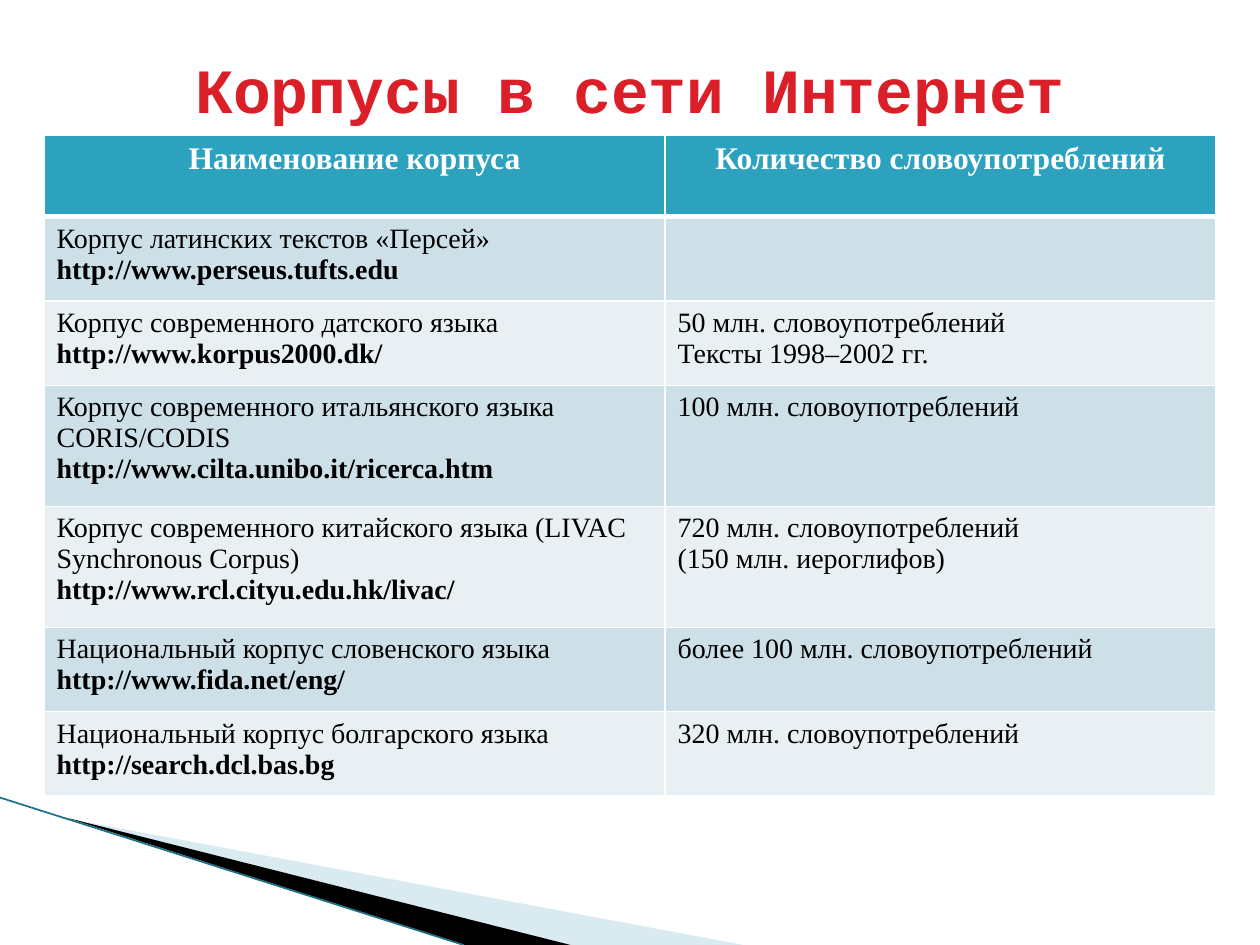
from dataclasses import dataclass

from lxml import etree
from pptx import Presentation
from pptx.dml.color import RGBColor
from pptx.enum.shapes import MSO_CONNECTOR
from pptx.enum.text import MSO_ANCHOR, PP_ALIGN
from pptx.oxml import parse_xml
from pptx.oxml.ns import nsdecls, qn
from pptx.util import Inches, Pt

CENTER, LEFT = PP_ALIGN.CENTER, PP_ALIGN.LEFT
MIDDLE = MSO_ANCHOR.MIDDLE
STRAIGHT = MSO_CONNECTOR.STRAIGHT

TITLE = "Корпусы в сети Интернет"
HEADER = ["Наименование корпуса", "Количество словоупотреблений"]
# Name of the corpus, its address, lines about its size
CORPORA = [
    ("Корпус латинских текстов «Персей»", "http://www.perseus.tufts.edu", []),
    ("Корпус современного датского языка", "http://www.korpus2000.dk/",
     ["50 млн. словоупотреблений", "Тексты 1998–2002 гг."]),
    ("Корпус современного итальянского языка CORIS/CODIS",
     "http://www.cilta.unibo.it/ricerca.htm", ["100 млн. словоупотреблений"]),
    ("Корпус современного китайского языка (LIVAC Synchronous Corpus)",
     "http://www.rcl.cityu.edu.hk/livac/",
     ["720 млн. словоупотреблений", "(150 млн. иероглифов)"]),
    ("Национальный корпус словенского языка", "http://www.fida.net/eng/",
     ["более 100 млн. словоупотреблений"]),
    ("Национальный корпус болгарского языка", "http://search.dcl.bas.bg",
     ["320 млн. словоупотреблений"]),
]


@dataclass(frozen=True)
class Theme:
    title_font: str = "Courier New"
    body_font: str = "Times New Roman"
    title_size: int = 36
    header_size: int = 18
    body_size: int = 16
    title: str = "DA1F28"
    header: str = "2DA2BF"
    bands: tuple = ("CDE0E8", "E8F0F4")
    white: str = "FFFFFF"
    black: str = "000000"
    pale_wedge: str = "A0CBDC"
    pale_opacity: int = 40
    edge: str = "1F7389"


THEME = Theme()
SLIDE_WIDTH, SLIDE_HEIGHT = 10, 7.5
MARGIN = 0.35
CONTENT_WIDTH = SLIDE_WIDTH - 2 * MARGIN
TABLE_TOP = 1.07
COLUMN_SHARES = [0.53, 0.47]
HEADER_HEIGHT, SHORT_ROW, TALL_ROW = 0.65, 0.67, 0.96
LONG_NAME = 45  # longer names wrap to a second line

WEDGES = [
    ([(0.55, 6.5), (5.9, SLIDE_HEIGHT), (4.53, SLIDE_HEIGHT)],
     THEME.pale_wedge, THEME.pale_opacity),
    ([(0.53, 6.49), (4.53, SLIDE_HEIGHT), (3.69, SLIDE_HEIGHT)],
     THEME.black, 100),
]
EDGE = [(0, 6.33), (3.68, SLIDE_HEIGHT)]


def rgb(color):
    return RGBColor.from_string(color)


def write(frame, lines, *, font=THEME.body_font, size=THEME.body_size,
          color=THEME.black, align=LEFT):
    """Fill one paragraph with (text, bold) lines parted by line breaks."""
    frame.word_wrap = True
    para = frame.paragraphs[0]
    para.alignment = align
    para.font.size = Pt(size)
    for index, (text, bold) in enumerate(lines):
        if index:
            para.add_line_break()
        span = para.add_run()
        span.text = text
        span.font.name = font
        span.font.size = Pt(size)
        span.font.bold = bold
        span.font.color.rgb = rgb(color)


def set_borders(cell, bottom=1):
    properties = cell._tc.get_or_add_tcPr()
    widths = {"lnL": 1, "lnR": 1, "lnT": 1, "lnB": bottom}
    for index, (tag, width) in enumerate(widths.items()):
        properties.insert(index, parse_xml(
            f'<a:{tag} {nsdecls("a")} w="{Pt(width)}"><a:solidFill>'
            f'<a:srgbClr val="{THEME.white}"/></a:solidFill></a:{tag}>'))


def fill_cell(cell, lines, fill, bottom=1, **text_format):
    cell.fill.solid()
    cell.fill.fore_color.rgb = rgb(fill)
    set_borders(cell, bottom)
    write(cell.text_frame, lines, **text_format)


def add_wedge(page, points, color, opacity):
    builder = page.shapes.build_freeform(
        *(Inches(value) for value in points[0]), scale=1)
    builder.add_line_segments(
        [(Inches(x), Inches(y)) for x, y in points[1:]], close=True)
    wedge = builder.convert_to_shape()
    wedge.shadow.inherit = False
    wedge.fill.solid()
    wedge.fill.fore_color.rgb = rgb(color)
    wedge.line.fill.background()
    if opacity < 100:
        tint = wedge.fill._xPr.find(".//" + qn("a:srgbClr"))
        etree.SubElement(tint, qn("a:alpha"), val=str(opacity * 1000))


def add_edge(page):
    start, end = EDGE
    edge = page.shapes.add_connector(
        STRAIGHT, *(Inches(value) for value in start + end))
    edge.line.color.rgb = rgb(THEME.edge)
    edge.line.width = Pt(1)
    etree.SubElement(edge._element.spPr, qn("a:effectLst"))


def add_corpus_table(page):
    heights = [HEADER_HEIGHT] + [
        TALL_ROW if len(name) > LONG_NAME else SHORT_ROW
        for name, _, _ in CORPORA]
    table = page.shapes.add_table(
        len(heights), len(HEADER), Inches(MARGIN), Inches(TABLE_TOP),
        Inches(CONTENT_WIDTH), Inches(sum(heights))).table
    for column, share in zip(table.columns, COLUMN_SHARES):
        column.width = Inches(CONTENT_WIDTH * share)
    for row, height in zip(table.rows, heights):
        row.height = Inches(height)

    for column, text in enumerate(HEADER):
        fill_cell(table.cell(0, column), [(text, True)], THEME.header, bottom=3,
                  size=THEME.header_size, color=THEME.white, align=CENTER)
    for index, (name, address, amounts) in enumerate(CORPORA):
        band = THEME.bands[index % 2]
        fill_cell(table.cell(index + 1, 0),
                  [(name, False), (address, True)], band)
        fill_cell(table.cell(index + 1, 1),
                  [(line, False) for line in amounts], band)


def add_title(page):
    box = page.shapes.add_textbox(
        Inches(MARGIN), Inches(0.21), Inches(CONTENT_WIDTH), Inches(0.98))
    box.text_frame.vertical_anchor = MIDDLE
    write(box.text_frame, [(TITLE, True)], font=THEME.title_font,
          size=THEME.title_size, color=THEME.title, align=CENTER)


def main():
    deck = Presentation()
    deck.slide_width, deck.slide_height = Inches(SLIDE_WIDTH), Inches(SLIDE_HEIGHT)
    page = deck.slides.add_slide(deck.slide_layouts[6])
    for wedge in WEDGES:
        add_wedge(page, *wedge)
    add_edge(page)
    add_corpus_table(page)
    add_title(page)
    deck.save("out.pptx")


if __name__ == "__main__":
    main()
